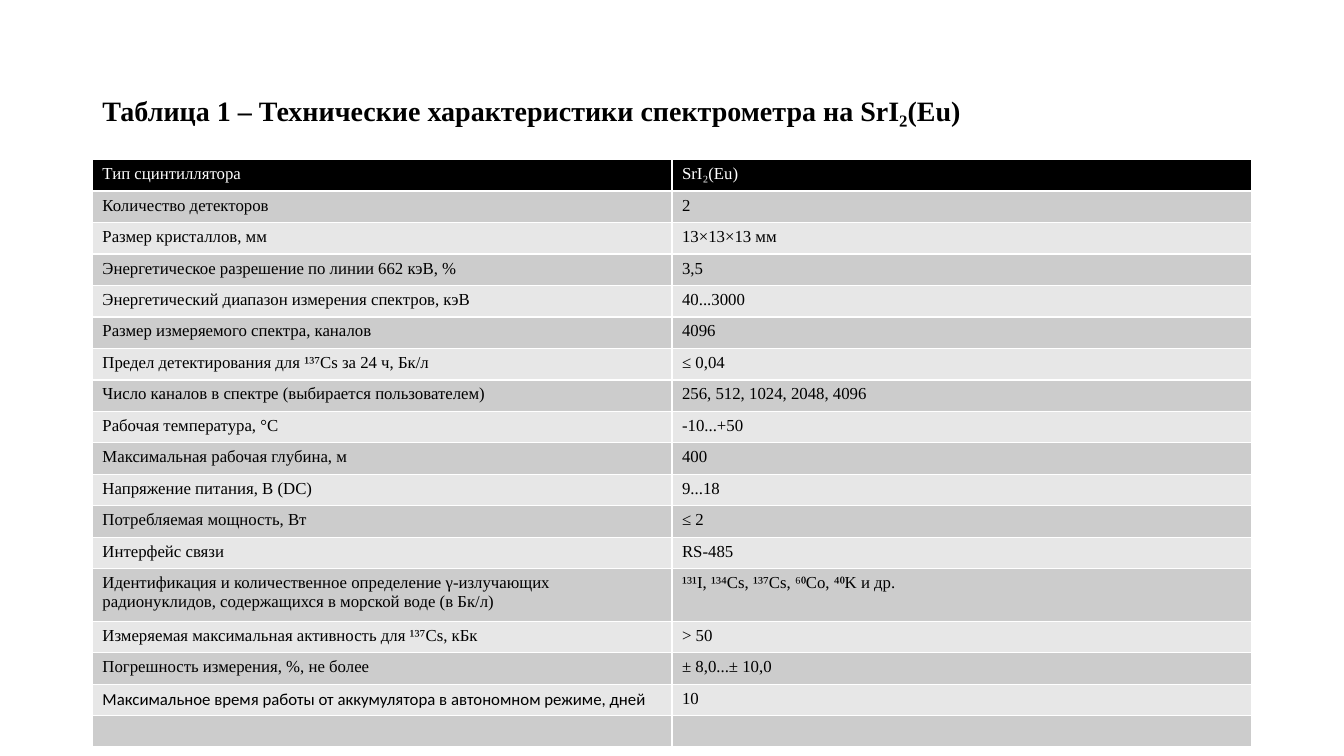
import pptx
import pptx.dml.color
import pptx.enum.text
import pptx.util

PX = 9525  # EMU per px, 96 px to the inch
FONT = "Times New Roman"
COLORS = {"black": "000000", "white": "FFFFFF", "odd": "CCCCCC", "even": "E7E7E7"}
ROWS = [
    ("Тип сцинтиллятора", "SrI₂(Eu)"),
    ("Количество детекторов", "2"),
    ("Размер кристаллов, мм", "13×13×13 мм"),
    ("Энергетическое разрешение по линии 662 кэВ, %", "3,5"),
    ("Энергетический диапазон измерения спектров, кэВ", "40...3000"),
    ("Размер измеряемого спектра, каналов", "4096"),
    ("Предел детектирования для ¹³⁷Cs за 24 ч, Бк/л", "≤ 0,04"),
    ("Число каналов в спектре (выбирается пользователем)", "256, 512, 1024, 2048, 4096"),
    ("Рабочая температура, °С", "-10...+50"),
    ("Максимальная рабочая глубина, м", "400"),
    ("Напряжение питания, В (DC)", "9...18"),
    ("Потребляемая мощность, Вт", "≤ 2"),
    ("Интерфейс связи", "RS-485"),
    ("Идентификация и количественное определение γ-излучающих радионуклидов, "
     "содержащихся в морской воде (в Бк/л)", "¹³¹I, ¹³⁴Cs, ¹³⁷Cs, ⁶⁰Co, ⁴⁰K и др."),
    ("Измеряемая максимальная активность для ¹³⁷Cs, кБк", "> 50"),
    ("Погрешность измерения, %, не более", "± 8,0...± 10,0"),
    ("Максимальное время работы от аккумулятора в автономном режиме, дней", "10"),
    ("", ""),
]
ROW_H, TALL_ROW_H, TALL_ROW = 30, 50, 13
CALIBRI_CELL = (16, 0)


def rgb(name):
    return pptx.dml.color.RGBColor.from_string(COLORS[name])


def format_font(font, name, size, color, bold):
    font.name = name
    font.size = pptx.util.Pt(size)
    font.bold = bold
    font.color.rgb = rgb(color)


prs = pptx.Presentation()
prs.slide_width, prs.slide_height = 1280 * PX, 720 * PX
s = prs.slides.add_slide(prs.slide_layouts[5])

# Title
title = s.shapes.title
title.left, title.top, title.width, title.height = (v * PX for v in (88, 38, 1104, 139))
tf = title.text_frame
tf.text = "Таблица 1 – Технические характеристики спектрометра на SrI₂(Eu)"
tf.word_wrap = True
tf.vertical_anchor = pptx.enum.text.MSO_ANCHOR.MIDDLE
p = tf.paragraphs[0]
p.alignment = pptx.enum.text.PP_ALIGN.LEFT
p.line_spacing = 0.9
format_font(p.runs[0].font, FONT, 20, "black", True)

# Table: the default style supplies the white borders
table_h = ROW_H * (len(ROWS) - 1) + TALL_ROW_H
table = s.shapes.add_table(len(ROWS), 2, 88 * PX, 152 * PX, 1104 * PX, table_h * PX).table
for i, row in enumerate(ROWS):
    table.rows[i].height = (TALL_ROW_H if i == TALL_ROW else ROW_H) * PX
    fill = "black" if i == 0 else "odd" if i % 2 else "even"
    for j, text in enumerate(row):
        cell = table.cell(i, j)
        cell.fill.solid()
        cell.fill.fore_color.rgb = rgb(fill)
        p = cell.text_frame.paragraphs[0]
        if text:
            p.text = text
            name = "Calibri" if (i, j) == CALIBRI_CELL else FONT
            format_font(p.runs[0].font, name, 12, "black" if i else "white", False)
        else:
            # Small end mark keeps the empty row at its set height
            p._p.get_or_add_endParaRPr().set("sz", "1200")

prs.save("out.pptx")
